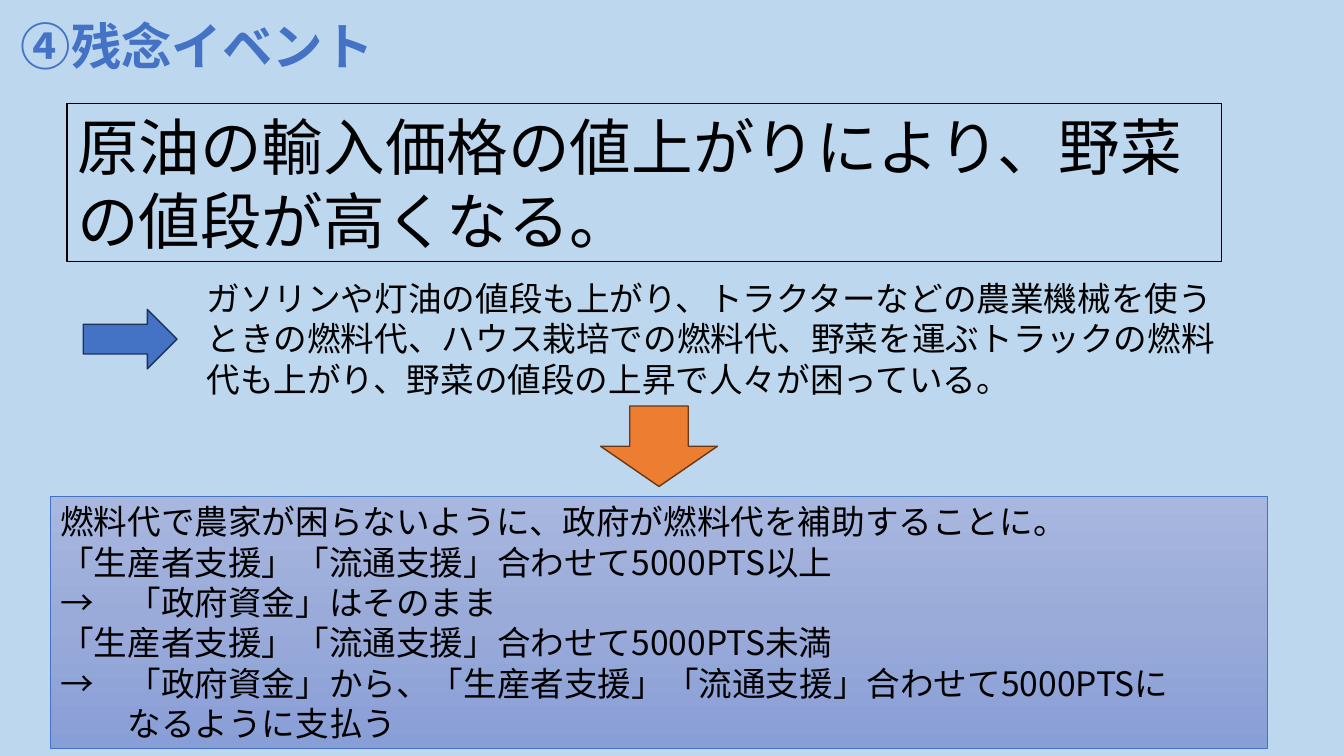
import copy

import pptx
import pptx.dml.color
import pptx.enum.shapes
import pptx.enum.text
import pptx.oxml.ns
import pptx.util
from lxml import etree

Pt = pptx.util.Pt
RGBColor = pptx.dml.color.RGBColor
Shape = pptx.enum.shapes.MSO_SHAPE
Align = pptx.enum.text.PP_ALIGN
Anchor = pptx.enum.text.MSO_ANCHOR
qn = pptx.oxml.ns.qn

SKY = RGBColor(0xBD, 0xD7, 0xEE)
BLACK = RGBColor(0x00, 0x00, 0x00)
BLUE = RGBColor(0x44, 0x72, 0xC4)
NAVY = RGBColor(0x1E, 0x32, 0x56)
ORANGE = RGBColor(0xED, 0x7D, 0x31)
BROWN = RGBColor(0x68, 0x37, 0x15)
POLICY_GRADIENT = [
    (0, RGBColor(0xA8, 0xB7, 0xDF)),
    (0.5, RGBColor(0x9A, 0xAB, 0xD9)),
    (1, RGBColor(0x88, 0x9E, 0xD7)),
]


class EventSlide:
    """Draw the elements of one event slide in a shared style."""

    font = "Noto Sans CJK JP"

    def __init__(self, deck):
        self.slide = deck.slides.add_slide(deck.slide_layouts[6])
        background = self.slide.background.fill
        background.solid()
        background.fore_color.rgb = SKY

    def add_shape(self, kind, place, line, width=1, fill=None):
        shape = self.slide.shapes.add_shape(kind, *map(Pt, place))
        shape.shadow.inherit = False
        shape.line.color.rgb = line
        shape.line.width = Pt(width)
        if fill is None:
            shape.fill.background()
        else:
            shape.fill.solid()
            shape.fill.fore_color.rgb = fill
        return shape

    def add_gradient(self, shape, colors):
        shape.fill.gradient()
        shape.fill.gradient_angle = 270
        shape.fill.gradient_stops[0].color.rgb = colors[0][1]
        stops = shape._element.spPr.find(qn("a:gradFill")).find(qn("a:gsLst"))
        pattern = copy.deepcopy(stops[0])
        for stop in list(stops):
            stops.remove(stop)
        for position, color in colors:
            stop = copy.deepcopy(pattern)
            stop.set("pos", str(int(position * 100000)))
            stop[0].set("val", str(color))
            stops.append(stop)

    def add_textbox(self, place):
        return self.slide.shapes.add_textbox(*map(Pt, place))

    def add_text(self, box, lines, size, color=BLACK, bold=False,
                 align=Align.LEFT, wrap=True, anchor=Anchor.TOP):
        frame = box.text_frame
        frame.word_wrap = wrap
        frame.vertical_anchor = anchor
        for index, (text, indent) in enumerate(lines):
            para = frame.paragraphs[0] if index == 0 else frame.add_paragraph()
            para.alignment = align
            if indent:
                properties = para._p.get_or_add_pPr()
                properties.set("marL", str(int(Pt(indent))))
                properties.set("indent", "0")
            span = para.add_run()
            span.text = text
            span.font.size = Pt(size)
            span.font.bold = bold
            span.font.color.rgb = color
            span.font.name = self.font
            east_asian = etree.SubElement(span._r.get_or_add_rPr(), qn("a:ea"))
            east_asian.set("typeface", self.font)


def main():
    deck = pptx.Presentation()
    deck.slide_width, deck.slide_height = Pt(960), Pt(540)
    page = EventSlide(deck)

    headline = page.add_shape(Shape.RECTANGLE, (48, 74, 824.5, 113), BLACK)
    page.add_text(headline, [
        ("原油の輸入価格の値上がりにより、野菜の値段が高くなる。", 0),
    ], 44, anchor=Anchor.MIDDLE)

    effect = page.add_textbox((140.5, 195, 739.5, 95))
    page.add_text(effect, [
        ("ガソリンや灯油の値段も上がり、トラクターなどの農業機械を使うときの燃料代、"
         "ハウス栽培での燃料代、野菜を運ぶトラックの燃料代も上がり、"
         "野菜の値段の上昇で人々が困っている。", 0),
    ], 24)

    page.add_shape(Shape.RIGHT_ARROW, (59.5, 221, 67, 42.5), NAVY, fill=BLUE)
    page.add_shape(Shape.DOWN_ARROW, (429, 290, 83.5, 57.5), BROWN, fill=ORANGE)

    title = page.add_textbox((7.5, 7.5, 266.5, 52.5))
    page.add_text(title, [("④残念イベント", 0)], 36, BLUE, bold=True,
                  align=Align.CENTER, wrap=False)

    policy = page.add_shape(Shape.RECTANGLE, (36, 354.5, 869, 180), BLUE, 0.5)
    page.add_gradient(policy, POLICY_GRADIENT)
    page.add_text(policy, [
        ("燃料代で農家が困らないように、政府が燃料代を補助することに。", 0),
        ("「生産者支援」「流通支援」合わせて5000PTS以上", 0),
        ("→　「政府資金」はそのまま", 0),
        ("「生産者支援」「流通支援」合わせて5000PTS未満", 0),
        ("→　「政府資金」から、「生産者支援」「流通支援」合わせて5000PTSに", 0),
        ("なるように支払う", 48),
    ], 24, anchor=Anchor.MIDDLE)

    deck.save("out.pptx")


if __name__ == "__main__":
    main()
